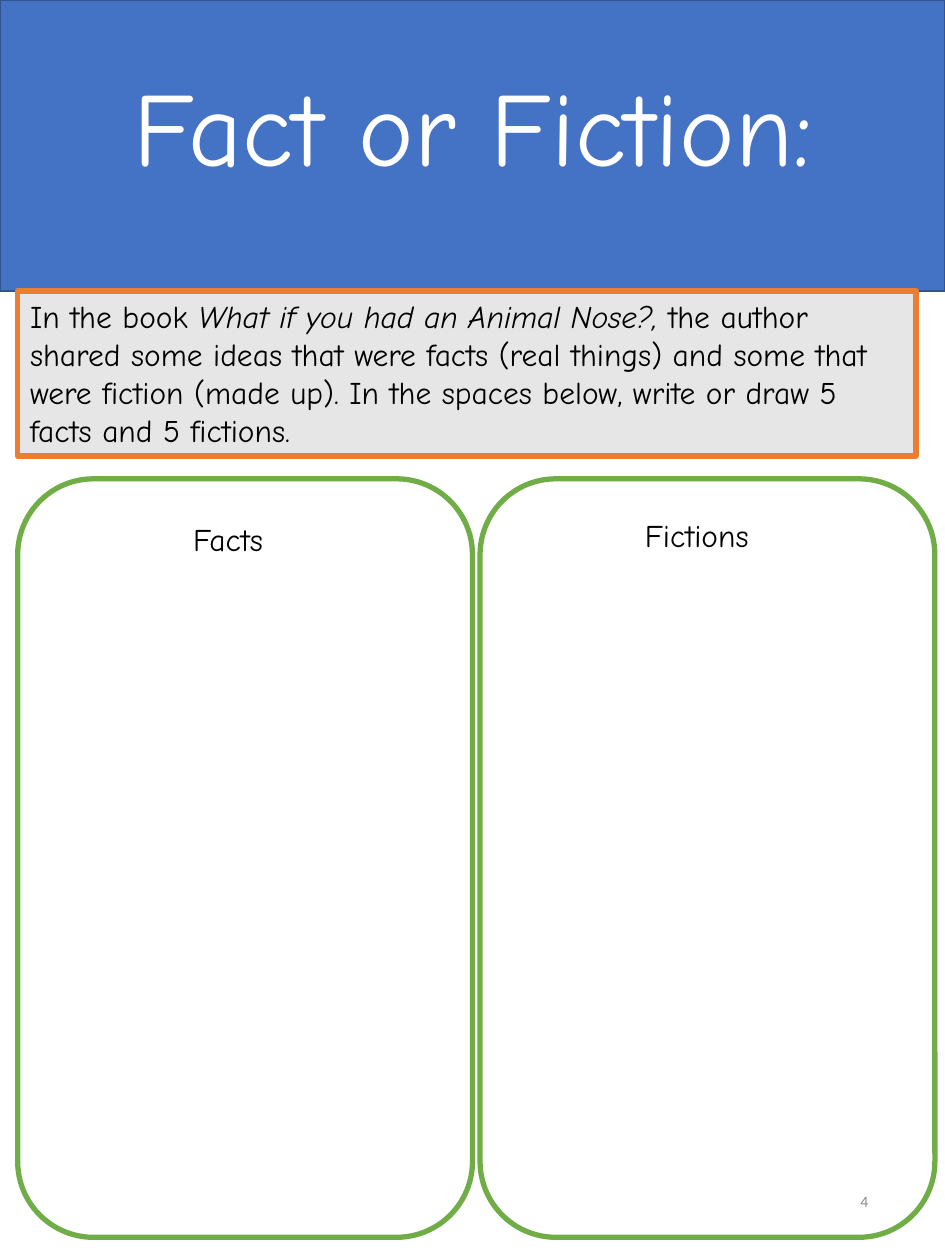
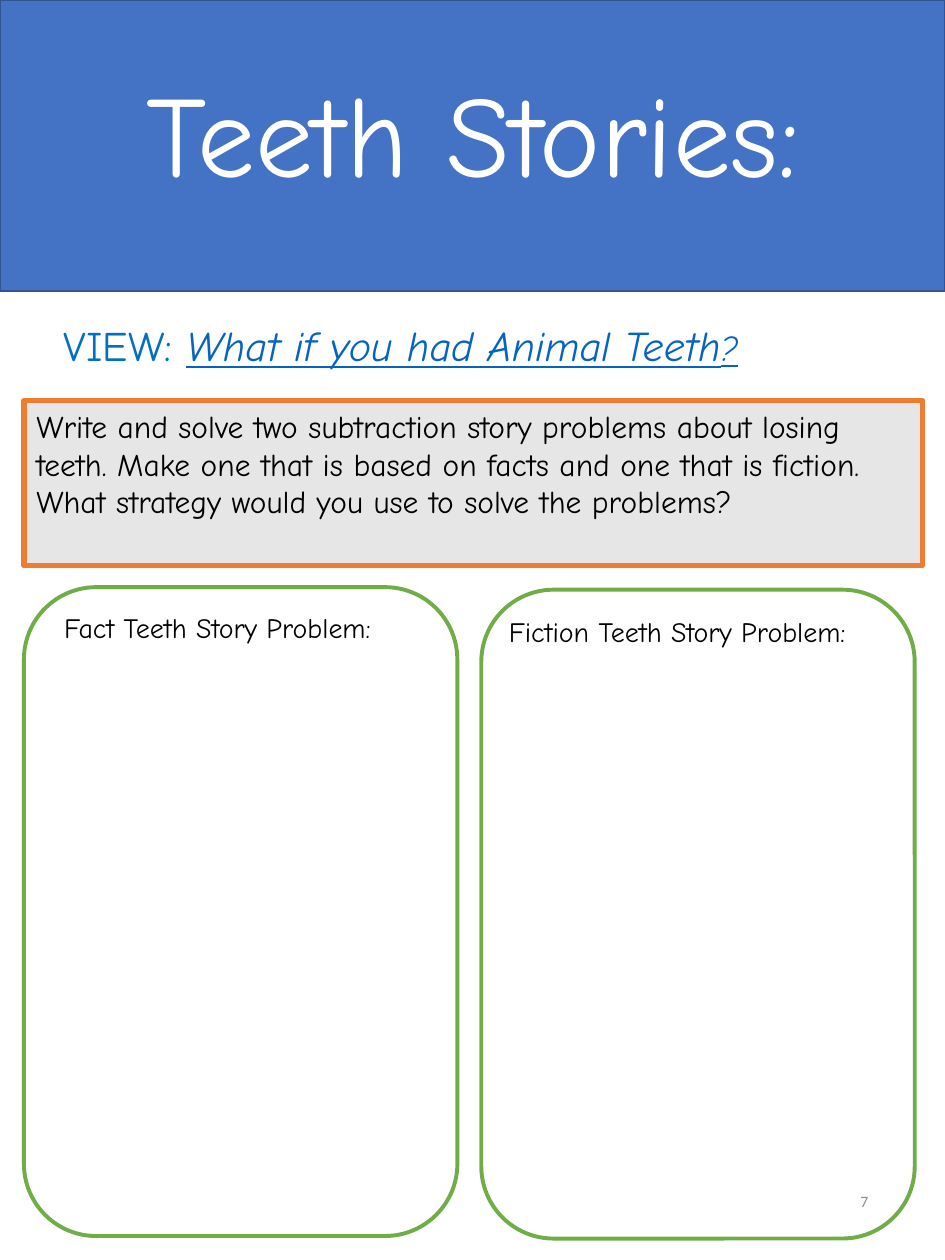
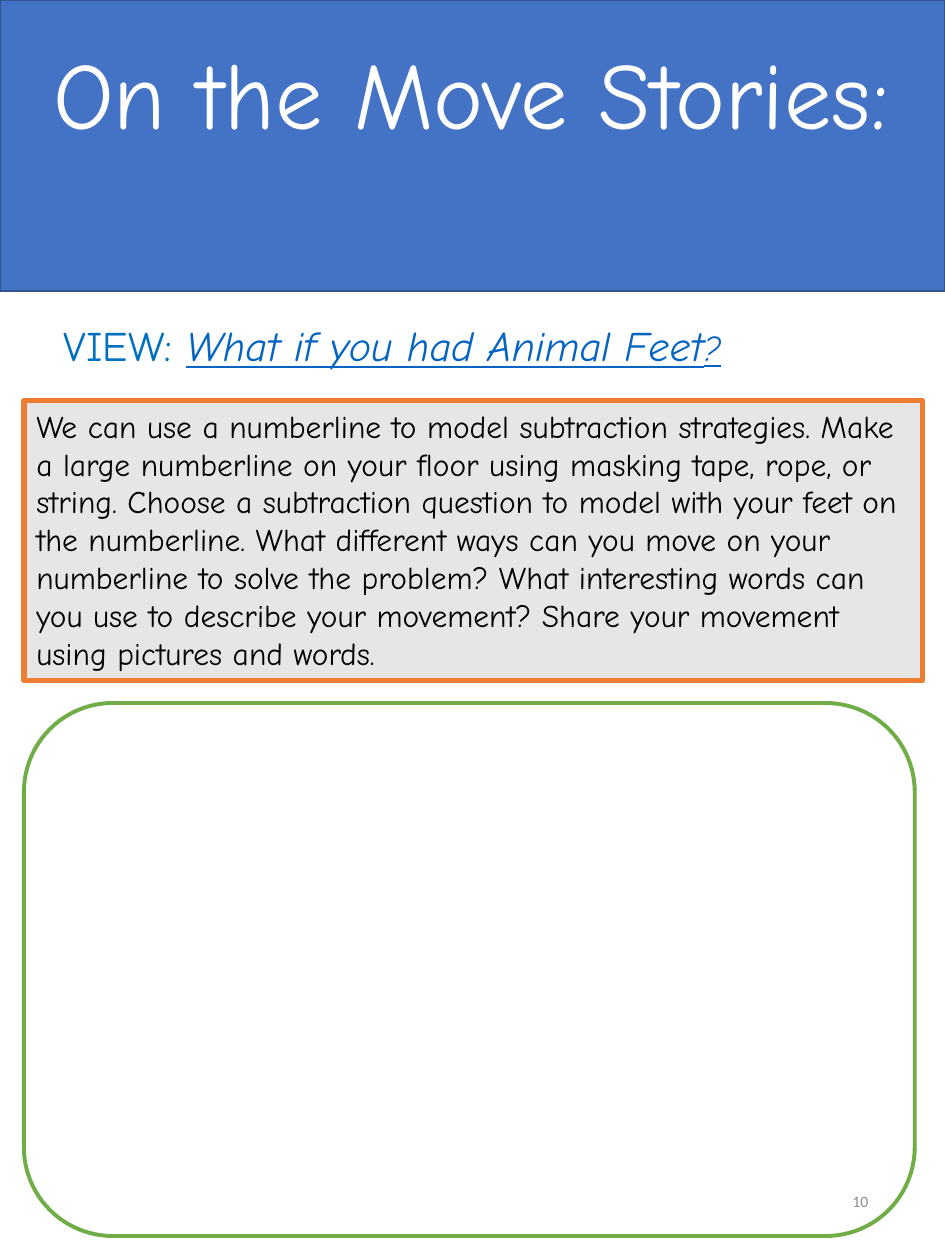
from pptx import Presentation
from pptx.dml.color import RGBColor
from pptx.enum.shapes import MSO_SHAPE
from pptx.enum.text import MSO_ANCHOR, PP_ALIGN
from pptx.util import Inches, Pt

RECTANGLE = MSO_SHAPE.RECTANGLE
ROUNDED = MSO_SHAPE.ROUNDED_RECTANGLE
LEFT, CENTER, RIGHT = PP_ALIGN.LEFT, PP_ALIGN.CENTER, PP_ALIGN.RIGHT
TOP, MIDDLE = MSO_ANCHOR.TOP, MSO_ANCHOR.MIDDLE

WIDTH, HEIGHT = Inches(7.5), Inches(10)
COLUMNS, ROWS = 75, 100  # square grid cells
COLORS = {
    "band": "4472C4", "band_line": "325491", "white": "FFFFFF",
    "task": "E7E6E6", "task_line": "ED7D31", "panel_line": "70AD47",
    "text": "000000", "view": "0070C0", "book": "0563C1", "number": "8C8C8C",
}
FONT, NUMBER_FONT = "Comic Neue", "Calibri"
TASK_WIDTH, TASK_SIZE = 71.3, 18
BAND_HEIGHT = 23.1


def color(name):
    """Return the named colour."""
    return RGBColor.from_string(COLORS[name])


class Worksheet:
    """Holds the shared style and the slide being built."""

    def __init__(self, presentation):
        """Keep the presentation and its blank layout."""
        self.presentation = presentation
        self.layout = presentation.slide_layouts[6]
        self.slide = None

    def place(self, left, top, width, height):
        """Turn grid columns and rows into slide lengths."""
        column, row = WIDTH / COLUMNS, HEIGHT / ROWS
        return (round(left * column), round(top * row),
                round(width * column), round(height * row))

    def box(self, kind, area, fill, line, weight):
        """Draw a filled and outlined shape."""
        shape = self.slide.shapes.add_shape(kind, *self.place(*area))
        shape.shadow.inherit = False
        shape.fill.solid()
        shape.fill.fore_color.rgb = color(fill)
        shape.line.color.rgb = color(line)
        shape.line.width = Pt(weight)
        return shape

    def set_text(self, shape, runs, size, ink="text", align=LEFT, anchor=TOP,
                 font=FONT):
        """Fill a shape with runs given as (text, changes) pairs."""
        frame = shape.text_frame
        frame.word_wrap = True
        frame.vertical_anchor = anchor
        paragraph = frame.paragraphs[0]
        paragraph.alignment = align
        for text, changes in runs:
            run = paragraph.add_run()
            run.text = text
            run.font.name = font
            run.font.size = Pt(changes.get("size", size))
            run.font.color.rgb = color(changes.get("ink", ink))
            run.font.italic = changes.get("italic", False)
            run.font.underline = changes.get("underline", False)

    def label(self, area, runs, size, **style):
        """Add a text box."""
        shape = self.slide.shapes.add_textbox(*self.place(*area))
        self.set_text(shape, runs, size, **style)

    def start(self, title, size, area):
        """Begin a slide with its title band."""
        self.slide = self.presentation.slides.add_slide(self.layout)
        self.box(RECTANGLE, (0, 0, COLUMNS, BAND_HEIGHT), "band",
                 "band_line", 1)
        self.label(area, [(title, {})], size, ink="white", align=CENTER)

    def task(self, left, top, height, runs):
        """Add the framed instructions."""
        shape = self.box(RECTANGLE, (left, top, TASK_WIDTH, height), "task",
                         "task_line", 3)
        self.set_text(shape, runs, TASK_SIZE)

    def view(self, book):
        """Add the line naming the book to view."""
        linked = {"ink": "book", "italic": True, "underline": True}
        self.label((4.1, 24.9, 63.6, 5),
                   [("VIEW: ", {}), (book, linked),
                    ("?", {**linked, "size": 20})], 24, ink="view")

    def panel(self, area, weight=2.25):
        """Add a rounded answer panel."""
        self.box(ROUNDED, area, "white", "panel_line", weight)

    def number(self, value):
        """Add the page number."""
        self.label((53, 92.7, 16.9, 5.3), [(str(value), {})], 9,
                   ink="number", align=RIGHT, anchor=MIDDLE,
                   font=NUMBER_FONT)


def fact_or_fiction(sheet):
    """Build the sheet that sorts facts from fictions."""
    sheet.start("Fact or Fiction:", 60, (2.4, 4.4, 70.3, 11.1))
    sheet.task(1.4, BAND_HEIGHT, 13.1, [
        ("In the book ", {}),
        ("What if you had an Animal Nose?, ", {"italic": True}),
        ("the author shared some ideas that were facts (real things) and "
         "some that were fiction (made up). In the spaces below, write or "
         "draw 5 facts and 5 fictions.", {})])
    for left in (1.4, 38.1):
        sheet.panel((left, 38, 36.1, 60.2), 3)
    for heading, left, top in (("Facts", 6.3, 40.8),
                               ("Fictions", 43.5, 40.5)):
        sheet.label((left, top, 23.6, 4), [(heading, {})], 18, align=CENTER)
    sheet.number(4)


def teeth_stories(sheet):
    """Build the sheet for two story problems."""
    sheet.start("Teeth Stories:", 66, (2.4, 4.4, 70.3, 12.1))
    sheet.task(1.9, 31.8, 13.1, [
        ("Write and solve two subtraction story problems about losing "
         "teeth. Make one that is based on facts and one that is fiction. "
         "What strategy would you use to solve the problems?", {})])
    sheet.view("What if you had Animal Teeth")
    for left, top in ((1.9, 46.6), (38.2, 46.8)):
        sheet.panel((left, top, 34.4, 51.5))
    for kind, left, top, width in (("Fact", 4.1, 48, 30.2),
                                   ("Fiction", 39.4, 48.3, 32.3)):
        sheet.label((left, top, width, 3.7),
                    [(f"{kind} Teeth Story Problem:", {})], 16)
    sheet.number(7)


def move_stories(sheet):
    """Build the numberline sheet."""
    sheet.start("On the Move Stories:", 54, (2.2, 2.3, 70.3, 19.2))
    sheet.task(1.9, 31.8, 22.2, [
        ("We can use a numberline to model subtraction strategies. Make a "
         "large numberline on your floor using masking tape, rope, or "
         "string. Choose a subtraction question to model with your feet on "
         "the numberline. What different ways can you move on your "
         "numberline to solve the problem? What interesting words can you "
         "use to describe your movement? Share your movement using pictures "
         "and words.", {})])
    sheet.view("What if you had Animal Feet")
    sheet.panel((1.9, 55.8, 70.7, 42.3))
    sheet.number(10)


def main():
    """Build and save the worksheets."""
    presentation = Presentation()
    presentation.slide_width, presentation.slide_height = WIDTH, HEIGHT
    sheet = Worksheet(presentation)
    for build in (fact_or_fiction, teeth_stories, move_stories):
        build(sheet)
    presentation.save("out.pptx")


main()
